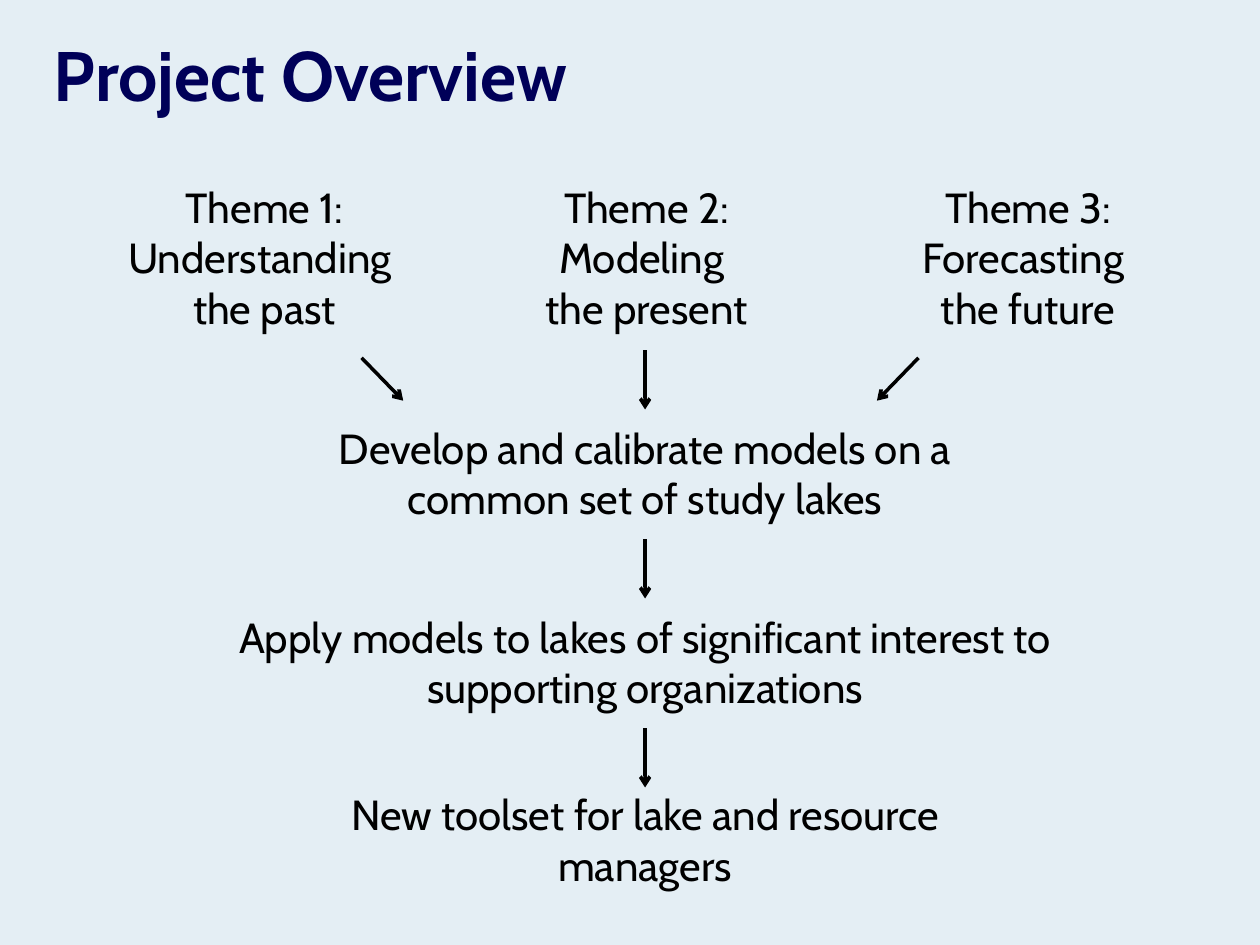
from collections import namedtuple
from dataclasses import dataclass

from lxml import etree
from pptx import Presentation
from pptx.dml.color import RGBColor
from pptx.enum.shapes import MSO_CONNECTOR
from pptx.enum.text import MSO_ANCHOR, MSO_AUTO_SIZE, PP_ALIGN
from pptx.oxml.ns import qn
from pptx.util import Inches, Pt

STRAIGHT = MSO_CONNECTOR.STRAIGHT
MIDDLE, TOP = MSO_ANCHOR.MIDDLE, MSO_ANCHOR.TOP
FIT, FIXED = MSO_AUTO_SIZE.SHAPE_TO_FIT_TEXT, MSO_AUTO_SIZE.NONE
LEFT, CENTER = PP_ALIGN.LEFT, PP_ALIGN.CENTER

WIDE, HIGH = Inches(10), Inches(7.5)
COLS, ROWS = 100, 75
Box = namedtuple("Box", "x y w h")


@dataclass(frozen=True)
class Theme:
    face: str = "Cabin"
    back: RGBColor = RGBColor(0xE4, 0xEE, 0xF4)
    navy: RGBColor = RGBColor(0x00, 0x00, 0x58)
    ink: RGBColor = RGBColor(0x00, 0x00, 0x00)
    head: Pt = Pt(40)
    body: Pt = Pt(24)
    line: Pt = Pt(2)


THEME = Theme()
HEAD = {"name": THEME.face, "size": THEME.head, "bold": True}
BODY = {"name": THEME.face, "size": THEME.body, "bold": False}


def col(n):
    return round(WIDE * n / COLS)


def row(n):
    return round(HIGH * n / ROWS)


def apply(item, values):
    for key, value in values.items():
        setattr(item, key, value)


def write(slide, box, text, font, color, align, frame):
    shape = slide.shapes.add_textbox(col(box.x), row(box.y), col(box.w), row(box.h))
    apply(shape.text_frame, frame)
    para = shape.text_frame.paragraphs[0]
    para.text = text
    para.alignment = align
    for run in para.runs:
        apply(run.font, font)
        run.font.color.rgb = color


def arrow(slide, x1, y1, x2, y2):
    link = slide.shapes.add_connector(STRAIGHT, col(x1), row(y1), col(x2), row(y2))
    link.line.width = THEME.line
    link.line.color.rgb = THEME.ink
    etree.SubElement(link.line._get_or_add_ln(), qn("a:tailEnd"), type="arrow")
    etree.SubElement(link._element.spPr, qn("a:effectLst"))


def title(slide, box):
    frame = {"word_wrap": True, "auto_size": FIXED, "vertical_anchor": MIDDLE}
    write(slide, box, "Project Overview", HEAD, THEME.navy, LEFT, frame)


def themes(slide, box):
    items = [
        ("Theme 1:\nUnderstanding \nthe past", 24.6),
        ("Theme 2:\nModeling \nthe present", 18.9),
        ("Theme 3:\nForecasting \nthe future", 20),
    ]
    frame = {"word_wrap": False, "auto_size": FIT, "vertical_anchor": TOP}
    step = box.w / (len(items) - 1)
    for i, (text, wide) in enumerate(items):
        spot = Box(box.x + i * step - wide / 2, box.y, wide, box.h)
        write(slide, spot, text, BODY, THEME.ink, CENTER, frame)


def merge(slide, box):
    right = box.x + box.w
    low = box.y + box.h
    arrow(slide, box.x, box.y, box.x + 3.3, low)
    arrow(slide, right, box.y, right - 3.3, low)


def stages(slide, box):
    items = [
        ("Develop and calibrate models on a common set of study lakes", 51.7, 5.2),
        ("Apply models to lakes of significant interest to supporting organizations", 68.3, 5.2),
        ("New toolset for lake and resource\nmanagers", 51.7, 4.3),
    ]
    frame = {"word_wrap": True, "auto_size": FIT, "vertical_anchor": TOP}
    mid = box.x + box.w / 2
    step = box.h / len(items)
    for i, (text, wide, drop) in enumerate(items):
        top = box.y + i * step
        arrow(slide, mid, top, mid, top + 4.7)
        spot = Box(mid - wide / 2, top + drop, wide, 9.1)
        write(slide, spot, text, BODY, THEME.ink, CENTER, frame)


def main():
    deck = Presentation()
    apply(deck, {"slide_width": WIDE, "slide_height": HIGH})
    slide = deck.slides.add_slide(deck.slide_layouts[6])
    fill = slide.background.fill
    fill.solid()
    fill.fore_color.rgb = THEME.back
    title(slide, Box(3.3, 2.5, 94.2, 6.7))
    themes(slide, Box(21, 13.9, 60.6, 13.1))
    merge(slide, Box(28.7, 28.4, 44.2, 3.4))
    stages(slide, Box(17, 27.8, 68.4, 45))
    deck.save("out.pptx")


if __name__ == "__main__":
    main()
